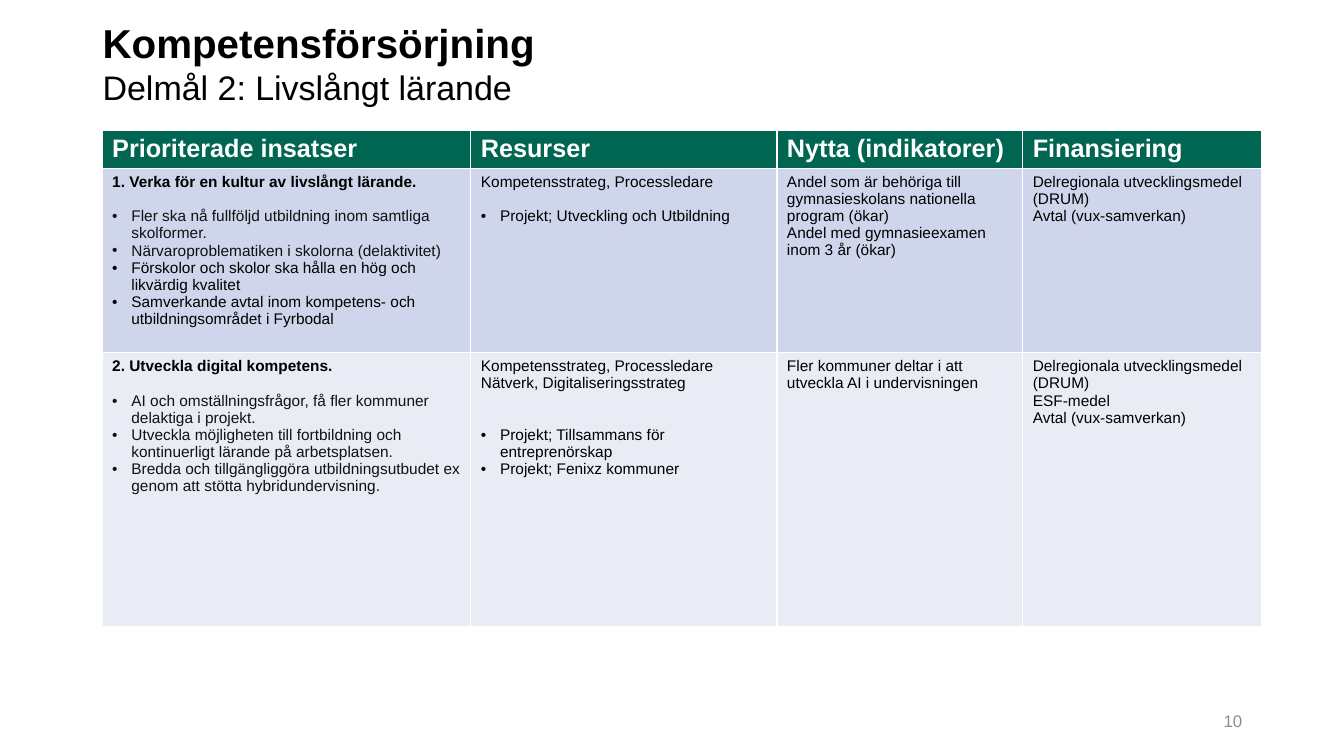
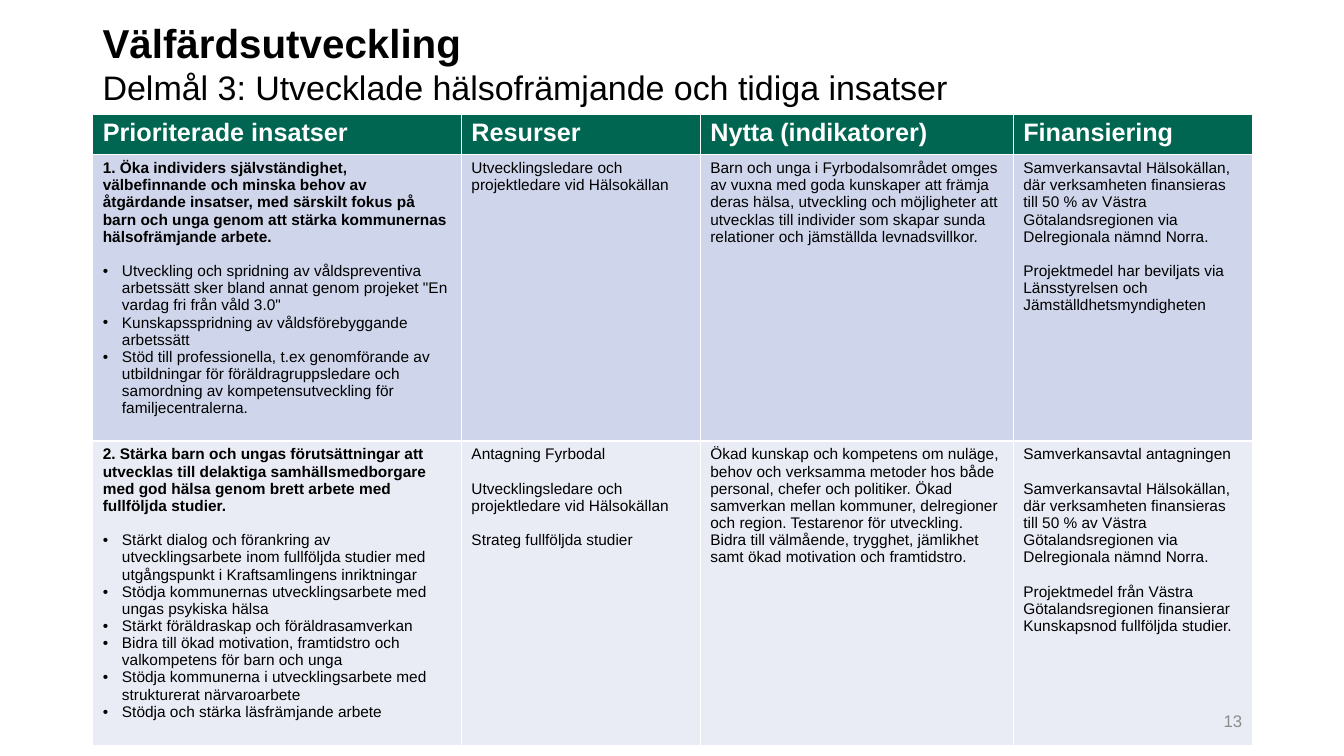
from dataclasses import dataclass
from typing import NamedTuple

from lxml.etree import SubElement
from pptx import Presentation
from pptx.dml.color import RGBColor
from pptx.enum.text import MSO_ANCHOR, PP_ALIGN
from pptx.oxml.ns import qn
from pptx.util import Inches, Pt

WIDE, HIGH = 13.33, 7.5
SPAN = 11.5
LINE = 12.3
INDENT = 0.19
BANDS = ("CFD5EA", "E9EBF5")
GREEN = "006651"
HEADS = ("Prioriterade insatser", "Resurser", "Nytta (indikatorer)", "Finansiering")
LOOKS = {
    "title": {"size": 28.8, "bold": True, "color": "000000"},
    "goal": {"size": 24.3, "bold": False, "color": "000000"},
    "head": {"size": 18, "bold": True, "color": "FFFFFF"},
    "lead": {"size": 11, "bold": True, "color": "000000"},
    "body": {"size": 11, "bold": False, "color": "000000"},
    "soft": {"size": 11, "bold": False, "color": "111111"},
    "page": {"size": 12, "bold": False, "color": "8C8C8C"},
}


class Par(NamedTuple):
    """A paragraph with its look, empty lines before it and bullet."""
    text: str
    look: str = "body"
    gap: int = 0
    dot: bool = False


@dataclass(frozen=True)
class Page:
    """A slide; places and rows are percent of the slide, columns of the table."""
    title: str
    goal: str
    number: int
    left: float
    top: float
    cols: tuple[float, ...]
    rows: tuple[float, ...]
    cells: tuple[tuple[list[Par], ...], ...]


def across(share: float) -> int:
    """Turn a percentage of the slide width into a length."""
    return Inches(WIDE * share / 100)


def down(share: float) -> int:
    """Turn a percentage of the slide height into a length."""
    return Inches(HIGH * share / 100)


def paint(code: str) -> RGBColor:
    """Turn a hex string into a colour."""
    return RGBColor.from_string(code)


def style(font, look: str) -> None:
    """Give a font one of the shared looks."""
    form = {"name": "Arial", **LOOKS[look]}
    font.color.rgb = paint(form.pop("color"))
    form["size"] = Pt(form["size"])
    for name, value in form.items():
        setattr(font, name, value)


def dots(*texts: str, gap: int = 1, look: str = "body") -> list[Par]:
    """Make a bullet list with a gap above its first item."""
    return [Par(text, look, 0 if rank else gap, True) for rank, text in enumerate(texts)]


def mark(para) -> None:
    """Put a hanging bullet on a paragraph."""
    props = para._p.get_or_add_pPr()
    props.set("marL", str(Inches(INDENT)))
    props.set("indent", str(-Inches(INDENT)))
    SubElement(props, qn("a:buFont"), typeface="Arial")
    SubElement(props, qn("a:buChar"), char="•")


def fill(cell, pars: list[Par], code: str) -> None:
    """Write paragraphs in a table cell and colour it."""
    cell.fill.solid()
    cell.fill.fore_color.rgb = paint(code)
    frame = cell.text_frame
    for rank, par in enumerate(pars):
        para = frame.add_paragraph() if rank else frame.paragraphs[0]
        if par.gap:
            para.space_before = Pt(par.gap * LINE)
        if par.dot:
            mark(para)
        run = para.add_run()
        run.text = par.text
        style(run.font, par.look)


def label(slide, box: tuple[int, int, int, int], runs: list[Par], align) -> None:
    """Add a centred-height text box with one run on each line."""
    frame = slide.shapes.add_textbox(*box).text_frame
    frame.word_wrap = True
    frame.vertical_anchor = MSO_ANCHOR.MIDDLE
    para = frame.paragraphs[0]
    para.alignment = align
    for rank, part in enumerate(runs):
        if rank:
            para.add_line_break()
        run = para.add_run()
        run.text = part.text
        style(run.font, part.look)


def grid(slide, page: Page) -> None:
    """Draw the table of a page."""
    shape = slide.shapes.add_table(
        len(page.rows), len(page.cols), across(page.left), down(page.top),
        Inches(SPAN), down(sum(page.rows)))
    table = shape.table
    for col, share in zip(table.columns, page.cols):
        col.width = Inches(SPAN * share / 100)
    for row, share in zip(table.rows, page.rows):
        row.height = down(share)
    heads = tuple([Par(text, "head")] for text in HEADS)
    for row, texts, code in zip(table.rows, (heads, *page.cells), (GREEN, *BANDS)):
        for cell, pars in zip(row.cells, texts):
            fill(cell, pars, code)


def draw(deck, page: Page) -> None:
    """Add one page to the deck."""
    slide = deck.slides.add_slide(deck.slide_layouts[6])
    grid(slide, page)
    label(slide, (across(6.9), down(4.93), Inches(SPAN), down(6.8)),
          [Par(page.title, "title"), Par(page.goal, "goal")], PP_ALIGN.LEFT)
    label(slide, (across(70.67), down(92.67), across(22.5), down(5.33)),
          [Par(str(page.number), "page")], PP_ALIGN.RIGHT)


DRUM = Par("Delregionala utvecklingsmedel (DRUM)")
VUX = Par("Avtal (vux-samverkan)")
STAFF = Par("Kompetensstrateg, Processledare")
DEAL = ("Samverkansavtal Hälsokällan, där verksamheten finansieras till 50 % av "
        "Västra Götalandsregionen via Delregionala nämnd Norra.")

PAGES = (
    Page(
        "Kompetensförsörjning", "Delmål 2: Livslångt lärande", 10, 7.6, 17.2,
        (31.8, 26.4, 21.2, 20.6), (4.8, 24.4, 36.2),
        (
            (
                [Par("1. Verka för en kultur av livslångt lärande.", "lead"),
                 *dots("Fler ska nå fullföljd utbildning inom samtliga skolformer.",
                       "Närvaroproblematiken i skolorna (delaktivitet)", look="soft"),
                 *dots("Förskolor och skolor ska hålla en hög och likvärdig kvalitet",
                       "Samverkande avtal inom kompetens- och utbildningsområdet i Fyrbodal",
                       gap=0)],
                [STAFF, *dots("Projekt; Utveckling och Utbildning")],
                [Par("Andel som är behöriga till gymnasieskolans nationella program (ökar)"),
                 Par("Andel med gymnasieexamen inom 3 år (ökar)")],
                [DRUM, VUX],
            ),
            (
                [Par("2. Utveckla digital kompetens.", "lead"),
                 *dots("AI och omställningsfrågor, få fler kommuner delaktiga i projekt.",
                       "Utveckla möjligheten till fortbildning och kontinuerligt lärande "
                       "på arbetsplatsen.",
                       "Bredda och tillgängliggöra utbildningsutbudet ex genom att stötta "
                       "hybridundervisning.", look="soft")],
                [STAFF, Par("Nätverk, Digitaliseringsstrateg"),
                 *dots("Projekt; Tillsammans för entreprenörskap",
                       "Projekt; Fenixz kommuner", gap=2)],
                [Par("Fler kommuner deltar i att utveckla AI i undervisningen")],
                [DRUM, Par("ESF-medel"), VUX],
            ),
        ),
    ),
    Page(
        "Välfärdsutveckling", "Delmål 3: Utvecklade hälsofrämjande och tidiga insatser",
        13, 6.9, 15.07, (31.8, 20.6, 27, 20.6), (5.4, 37.7, 37.6),
        (
            (
                [Par("1. Öka individers självständighet, välbefinnande och minska behov av "
                     "åtgärdande insatser, med särskilt fokus på barn och unga genom att "
                     "stärka kommunernas hälsofrämjande arbete.", "lead"),
                 *dots("Utveckling och spridning av våldspreventiva arbetssätt sker bland "
                       "annat genom projeket \"En vardag fri från våld 3.0\"",
                       "Kunskapsspridning av våldsförebyggande arbetssätt",
                       "Stöd till professionella, t.ex genomförande av utbildningar för "
                       "föräldragruppsledare och samordning av kompetensutveckling för "
                       "familjecentralerna.")],
                [Par("Utvecklingsledare och projektledare vid Hälsokällan")],
                [Par("Barn och unga i Fyrbodalsområdet omges av vuxna med goda kunskaper att "
                     "främja deras hälsa, utveckling och möjligheter att utvecklas till "
                     "individer som skapar sunda relationer och jämställda levnadsvillkor.")],
                [Par(DEAL),
                 Par("Projektmedel har beviljats via Länsstyrelsen och "
                     "Jämställdhetsmyndigheten", gap=1)],
            ),
            (
                [Par("2. Stärka barn och ungas förutsättningar att utvecklas till delaktiga "
                     "samhällsmedborgare med god hälsa genom brett arbete med fullföljda "
                     "studier.", "lead"),
                 *dots("Stärkt dialog och förankring av utvecklingsarbete inom fullföljda "
                       "studier med utgångspunkt i Kraftsamlingens inriktningar",
                       "Stödja kommunernas utvecklingsarbete med ungas psykiska hälsa",
                       "Stärkt föräldraskap och föräldrasamverkan",
                       "Bidra till ökad motivation, framtidstro och valkompetens för barn "
                       "och unga",
                       "Stödja kommunerna i utvecklingsarbete med strukturerat närvaroarbete",
                       "Stödja och stärka läsfrämjande arbete")],
                [Par("Antagning Fyrbodal"),
                 Par("Utvecklingsledare och projektledare vid Hälsokällan", gap=1),
                 Par("Strateg fullföljda studier", gap=1)],
                [Par("Ökad kunskap och kompetens om nuläge, behov och verksamma metoder hos "
                     "både personal, chefer och politiker. Ökad samverkan mellan kommuner, "
                     "delregioner och region. Testarenor för utveckling. Bidra till "
                     "välmående, trygghet, jämlikhet samt ökad motivation och framtidstro.")],
                [Par("Samverkansavtal antagningen"), Par(DEAL, gap=1),
                 Par("Projektmedel från Västra Götalandsregionen finansierar Kunskapsnod "
                     "fullföljda studier.", gap=1)],
            ),
        ),
    ),
)


def main() -> None:
    """Build and save the deck."""
    deck = Presentation()
    deck.slide_width, deck.slide_height = Inches(WIDE), Inches(HIGH)
    for page in PAGES:
        draw(deck, page)
    deck.save("out.pptx")


if __name__ == "__main__":
    main()
